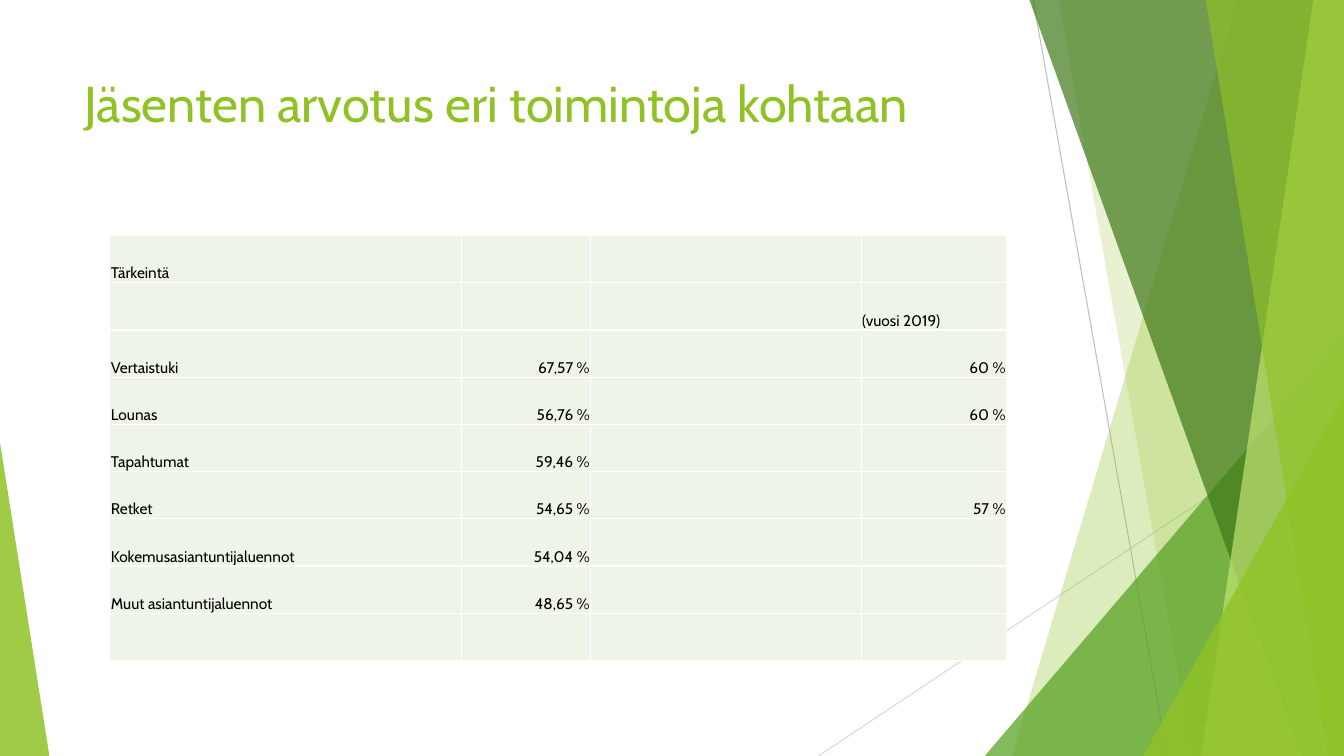
from lxml.etree import SubElement
from pptx import Presentation
from pptx.dml.color import RGBColor
from pptx.enum.shapes import MSO_CONNECTOR, MSO_SHAPE
from pptx.enum.text import MSO_ANCHOR, PP_ALIGN
from pptx.oxml.ns import qn
from pptx.util import Pt

FONT = "Cabin"
WIDE, HIGH, TOP = 960, 540, -0.72
COLORS = {
    "lime": "90C226", "green": "54A021", "dark": "3F7819", "pale": "C0E474",
    "mint": "EEF4E8", "white": "FFFFFF", "black": "000000",
    "gray": "BFBFBF", "light": "D9D9D9",
}
TITLE = "Jäsenten arvotus eri toimintoja kohtaan"
ROWS = [
    ("Tärkeintä", "", "", ""),
    ("", "", "", "(vuosi 2019)"),
    ("Vertaistuki", "67,57 %", "", "60 %"),
    ("Lounas", "56,76 %", "", "60 %"),
    ("Tapahtumat", "59,46 %", "", ""),
    ("Retket", "54,65 %", "", "57 %"),
    ("Kokemusasiantuntijaluennot", "54,04 %", "", ""),
    ("Muut asiantuntijaluennot", "48,65 %", "", ""),
    ("", "", "", ""),
]
COLS = [251.3, 92.2, 193.2, 103.9]
ROW = 33.75
LINES = [
    ((738, 0), (833.8, HIGH), "gray"),
    ((WIDE, 290.2), (584.6, HIGH), "light"),
]
# kind, geometry, colour, opacity in percent
FACETS = [
    ("band", (884.2, 722.9), "lime", 30),
    ("band", (756, 851.8), "lime", 20),
    ("peak", (703.4, 239.8, 256.6, 1), "green", 72),
    ("band", (735.1, 929.5), "dark", 70),
    ("band", (938.2, 858.2), "pale", 70),
    ("band", (861.1, 949), "lime", 65),
    ("peak", (816.5, 283, 143.5, 1), "lime", 80),
    ("peak", (0, 316.1, 35.3, 0), "lime", 85),
]


def rgb(name):
    """Return a named colour."""
    return RGBColor.from_string(COLORS[name])


def add_line(slide, start, end, color):
    """Draw one thin line."""
    line = slide.shapes.add_connector(
        MSO_CONNECTOR.STRAIGHT, *map(Pt, start + end))
    line.line.color.rgb = rgb(color)
    line.line.width = Pt(0.75)
    SubElement(line._element.spPr, qn("a:effectLst"))


def add_facet(slide, kind, geom, color, alpha):
    """Draw one see-through band or triangle."""
    if kind == "band":
        upper, lower = geom
        form = slide.shapes.build_freeform(Pt(upper), Pt(TOP))
        ends = [(WIDE, TOP), (WIDE, HIGH), (lower, HIGH)]
        form.add_line_segments([(Pt(x), Pt(y)) for x, y in ends], close=True)
        shape = form.convert_to_shape()
    else:
        left, top, width, tip = geom
        shape = slide.shapes.add_shape(
            MSO_SHAPE.ISOSCELES_TRIANGLE,
            Pt(left), Pt(top), Pt(width), Pt(HIGH - top))
        shape.adjustments[0] = tip
    shape.shadow.inherit = False
    shape.line.fill.background()
    shape.fill.solid()
    shape.fill.fore_color.rgb = rgb(color)
    tint = shape._element.spPr.find(qn("a:solidFill"))[0]
    SubElement(tint, qn("a:alpha"), val=str(alpha * 1000))


def set_font(para, size, color):
    """Style a paragraph."""
    para.font.name = FONT
    para.font.size = Pt(size)
    para.font.color.rgb = rgb(color)


def add_title(slide):
    """Write the heading."""
    box = slide.shapes.add_textbox(Pt(53.3), Pt(48), Pt(677), Pt(104))
    frame = box.text_frame
    frame.word_wrap = True
    frame.text = TITLE
    set_font(frame.paragraphs[0], 36, "lime")


def fill_cell(cell, text):
    """Style a cell and write its text."""
    props = cell._tc.get_or_add_tcPr()
    for side in ("lnL", "lnR", "lnT", "lnB"):
        edge = SubElement(props, qn(f"a:{side}"), w=str(Pt(1)))
        paint = SubElement(edge, qn("a:solidFill"))
        SubElement(paint, qn("a:srgbClr"), val=COLORS["white"])
    cell.fill.solid()
    cell.fill.fore_color.rgb = rgb("mint")
    cell.vertical_anchor = MSO_ANCHOR.BOTTOM
    cell.margin_left = cell.margin_right = cell.margin_top = Pt(0.72)
    cell.margin_bottom = 0
    cell.text = text
    para = cell.text_frame.paragraphs[0]
    set_font(para, 11, "black")
    if text.endswith("%"):
        para.alignment = PP_ALIGN.RIGHT


def add_grid(slide):
    """Build the table of values."""
    grid = slide.shapes.add_table(
        len(ROWS), len(COLS), Pt(78.5), Pt(168.2),
        Pt(sum(COLS)), Pt(ROW * len(ROWS))).table
    grid.first_row = grid.horz_banding = False
    for col, width in zip(grid.columns, COLS):
        col.width = Pt(width)
    for row, texts in zip(grid.rows, ROWS):
        row.height = Pt(ROW)
        for cell, text in zip(row.cells, texts):
            fill_cell(cell, text)


def main():
    """Build and save the slide."""
    deck = Presentation()
    deck.slide_width, deck.slide_height = Pt(WIDE), Pt(HIGH)
    slide = deck.slides.add_slide(deck.slide_layouts[6])
    for line in LINES:
        add_line(slide, *line)
    for facet in FACETS:
        add_facet(slide, *facet)
    add_title(slide)
    add_grid(slide)
    deck.save("out.pptx")


if __name__ == "__main__":
    main()
